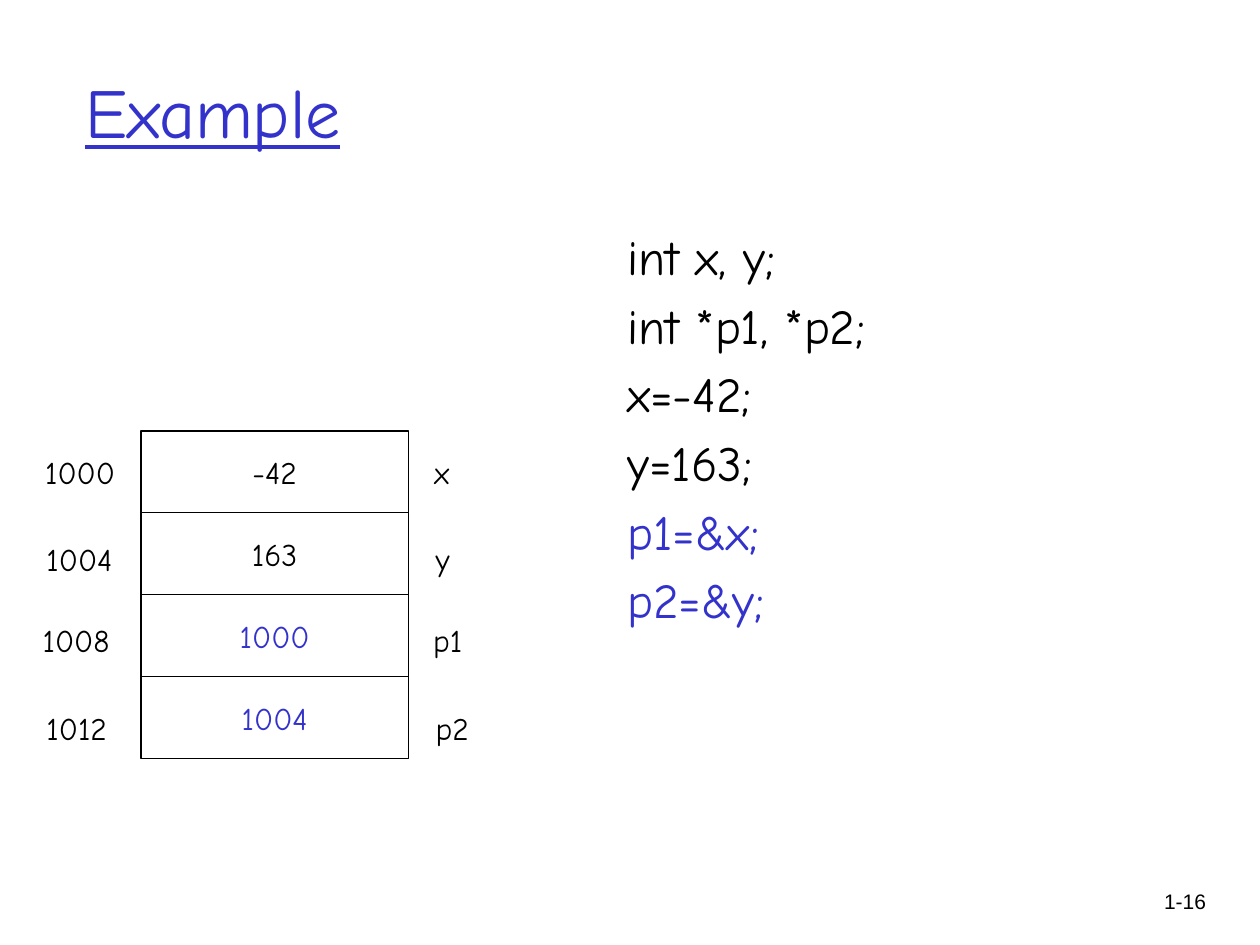
import pptx
import pptx.dml.color
import pptx.enum.shapes
import pptx.enum.text
import pptx.util
from lxml import etree
from pptx.util import Inches

BLACK = pptx.dml.color.RGBColor(0x00, 0x00, 0x00)
BLUE = pptx.dml.color.RGBColor(0x33, 0x33, 0xCC)
ALIGN = pptx.enum.text.PP_ALIGN
MIDDLE = pptx.enum.text.MSO_ANCHOR.MIDDLE

CODE = [
    ("int x, y;", BLACK),
    ("int *p1, *p2;", BLACK),
    ("x=-42;", BLACK),
    ("y=163;", BLACK),
    ("p1=&x;", BLUE),
    ("p2=&y;", BLUE),
]
MEMORY = [
    ("1000", 0.26, "-42", BLACK, "x", 3.35, 3.55),
    ("1004", 0.27, "163", BLACK, "y", 3.36, 4.24),
    ("1008", 0.24, "1000", BLUE, "p1", 3.34, 4.88),
    ("1012", 0.27, "1004", BLUE, "p2", 3.36, 5.58),
]
CELL_LEFT, CELL_TOP, CELL_WIDTH, CELL_HEIGHT = 1.12, 3.42, 2.12, 0.65
LABEL_SIZE = (0.77, 0.4)


def write(para, words, size, color=BLACK, **extra):
    span = para.add_run()
    span.text = words
    span.font.color.rgb = color
    formats = {"name": "Comic Neue", "size": pptx.util.Pt(size), **extra}
    for name, value in formats.items():
        setattr(span.font, name, value)


def add_box(page, left, top, width, height):
    box = page.shapes.add_textbox(*map(Inches, (left, top, width, height)))
    box.text_frame.word_wrap = True
    return box.text_frame


def add_label(page, words, left, top):
    frame = add_box(page, left, top, *LABEL_SIZE)
    frame.auto_size = pptx.enum.text.MSO_AUTO_SIZE.SHAPE_TO_FIT_TEXT
    write(frame.paragraphs[0], words, 18)


def add_cell(page, row, words, color):
    top = CELL_TOP + row * CELL_HEIGHT
    cell = page.shapes.add_shape(
        pptx.enum.shapes.MSO_SHAPE.RECTANGLE,
        *map(Inches, (CELL_LEFT, top, CELL_WIDTH, CELL_HEIGHT)),
    )
    cell.shadow.inherit = False
    cell.fill.background()
    cell.line.color.rgb = BLACK
    cell.line.width = pptx.util.Pt(0.75)
    frame = cell.text_frame
    for name, value in {"word_wrap": False, "vertical_anchor": MIDDLE}.items():
        setattr(frame, name, value)
    frame.paragraphs[0].alignment = ALIGN.CENTER
    write(frame.paragraphs[0], words, 18, color)


def add_code(page):
    frame = add_box(page, 4.88, 1.75, 4.2, 4.73)
    for index, (words, color) in enumerate(CODE):
        para = frame.add_paragraph() if index else frame.paragraphs[0]
        para.space_before = pptx.util.Pt(0)
        properties = para._p.get_or_add_pPr()
        properties.set("marL", str(Inches(0.38)))
        properties.set("indent", str(Inches(-0.38)))
        before = properties.find(pptx.oxml.ns.qn("a:spcBef"))
        before.clear()
        etree.SubElement(before, pptx.oxml.ns.qn("a:spcPct"), val="20000")
        write(para, words, 28, color)


def main():
    deck = pptx.Presentation()
    deck.slide_width, deck.slide_height = Inches(10), Inches(7.5)
    page = deck.slides.add_slide(deck.slide_layouts[6])

    number = add_box(page, 8.93, 7, 0.74, 0.5).paragraphs[0]
    number.alignment = ALIGN.RIGHT
    write(number, "1-16", 12, name="Arial")

    title = add_box(page, 0.58, 0.25, 8.5, 1.25)
    title.vertical_anchor = MIDDLE
    write(title.paragraphs[0], "Example", 40, BLUE, underline=True)

    add_code(page)
    for row, (address, left, value, color, variable, right, top) in enumerate(MEMORY):
        add_cell(page, row, value, color)
        add_label(page, address, left, top)
        add_label(page, variable, right, top)

    deck.save("out.pptx")


if __name__ == "__main__":
    main()
